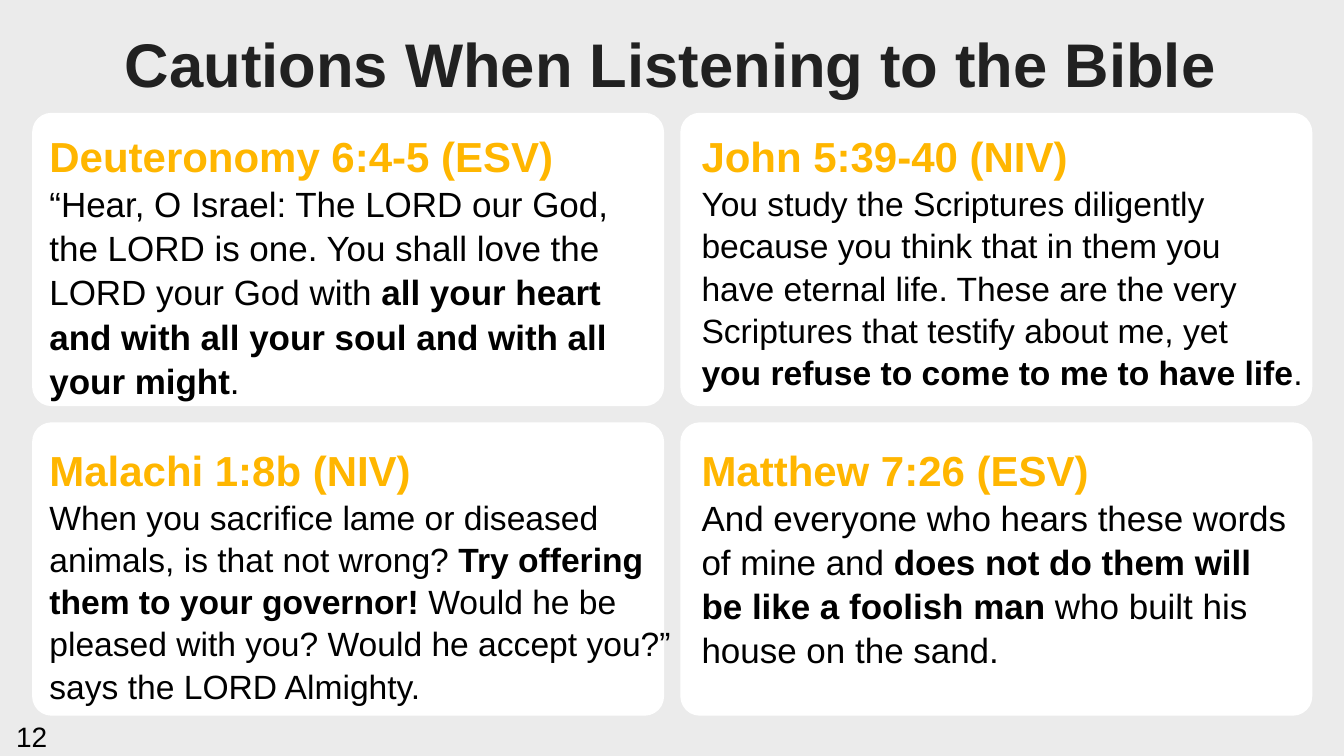
import pptx
import pptx.dml.color
import pptx.enum.shapes
import pptx.enum.text
import pptx.util

Pt = pptx.util.Pt
RGBColor = pptx.dml.color.RGBColor
PP_ALIGN = pptx.enum.text.PP_ALIGN

BACKGROUND = RGBColor(0xEB, 0xEB, 0xEB)
TITLE_GREY = RGBColor(0x21, 0x21, 0x21)
GOLD = RGBColor(0xFF, 0xB6, 0x00)
WHITE = RGBColor(0xFF, 0xFF, 0xFF)
BLACK = RGBColor(0x00, 0x00, 0x00)
FONT = "Arial"
LINE_SPACING = 1.05

# Card grid, in points
GRID_LEFT, GRID_TOP = 23, 80.6
CARD_WIDTH, CARD_HEIGHT = 451.4, 209.5
COLUMN_GAP, ROW_GAP = 11.6, 11.6
COLUMN_INSETS = (12.3, 15.1)
ROW_INSETS = (10.8, 13.7)

# Each passage: row, column, text width, text height, size, reference, (text, bold) runs
PASSAGES = [
    (0, 0, 422, 188, 25, "Deuteronomy 6:4-5 (ESV)", [
        ("“Hear, O Israel: The LORD our God, the LORD is one. You shall love "
         "the LORD your God with ", False),
        ("all your heart and with all your soul and with all your might", True),
        (". ", False)]),
    (1, 0, 450, 188, 24, "Malachi 1:8b (NIV)", [
        ("When you sacrifice lame or diseased animals, is that not wrong? ", False),
        ("Try offering them to your governor!", True),
        (" Would he be pleased with you? Would he accept you?” says the LORD "
         "Almighty.", False)]),
    (0, 1, 448.6, 181.4, 24, "John 5:39-40 (NIV)", [
        ("You study the Scriptures diligently because you think that in them you \n"
         "have eternal life. These are the very Scriptures that testify about me, yet \n",
         False),
        ("you refuse to come to me to have life", True),
        (". ", False)]),
    (1, 1, 422, 157.7, 25, "Matthew 7:26 (ESV)", [
        ("And everyone who hears these words of mine and ", False),
        ("does not do them will be like a foolish man ", True),
        ("who built his house on the sand.", False)]),
]


def prepare_frame(shape):
    frame = shape.text_frame
    frame.margin_left = frame.margin_right = 0
    frame.margin_top = frame.margin_bottom = 0
    frame.word_wrap = True
    frame.auto_size = pptx.enum.text.MSO_AUTO_SIZE.SHAPE_TO_FIT_TEXT
    frame.vertical_anchor = pptx.enum.text.MSO_ANCHOR.TOP
    return frame


def add_text(paragraph, text, size, color, bold=False):
    """Add one styled run for each line of the text."""
    for index, line in enumerate(text.split("\n")):
        if index:
            paragraph.add_line_break()
        if line:
            run = paragraph.add_run()
            run.text = line
            run.font.name = FONT
            run.font.size = Pt(size)
            run.font.bold = bold
            run.font.color.rgb = color


def format_paragraph(paragraph, alignment=PP_ALIGN.LEFT):
    paragraph.alignment = alignment
    paragraph.line_spacing = LINE_SPACING
    paragraph.space_before = paragraph.space_after = Pt(0)


def add_title(slide, left, top, width, height):
    title = slide.shapes.title
    title.left, title.top = Pt(left), Pt(top)
    title.width, title.height = Pt(width), Pt(height)
    paragraph = prepare_frame(title).paragraphs[0]
    format_paragraph(paragraph, PP_ALIGN.CENTER)
    add_text(paragraph, "Cautions When Listening to the Bible", 44, TITLE_GREY, True)


def add_page_number(slide, left, top, width, height):
    box = slide.shapes.add_textbox(Pt(left), Pt(top), Pt(width), Pt(height))
    paragraph = prepare_frame(box).paragraphs[0]
    format_paragraph(paragraph)
    add_text(paragraph, "12", 20, BLACK)


def add_card(slide, left, top, width, height):
    card = slide.shapes.add_shape(
        pptx.enum.shapes.MSO_SHAPE.ROUNDED_RECTANGLE,
        Pt(left), Pt(top), Pt(width), Pt(height))
    card.adjustments[0] = 0.066
    card.shadow.inherit = False
    card.fill.solid()
    card.fill.fore_color.rgb = WHITE
    card.line.fill.background()


def add_passage(slide, left, top, width, height, size, reference, runs):
    box = slide.shapes.add_textbox(Pt(left), Pt(top), Pt(width), Pt(height))
    frame = prepare_frame(box)
    heading = frame.paragraphs[0]
    format_paragraph(heading)
    add_text(heading, reference, 30, GOLD, True)
    verse = frame.add_paragraph()
    format_paragraph(verse)
    for text, bold in runs:
        add_text(verse, text, size, BLACK, bold)


def main():
    presentation = pptx.Presentation()
    presentation.slide_width, presentation.slide_height = Pt(960), Pt(540)
    slide = presentation.slides.add_slide(presentation.slide_layouts[5])
    slide.background.fill.solid()
    slide.background.fill.fore_color.rgb = BACKGROUND

    # Title and page number
    add_page_number(slide, 11.5, 512.6, 80, 24.5)
    add_title(slide, 18, 15.8, 923, 53.3)

    # Cards first, so that long verses stay in front
    lefts = [GRID_LEFT + column * (CARD_WIDTH + COLUMN_GAP) for column in range(2)]
    tops = [GRID_TOP + row * (CARD_HEIGHT + ROW_GAP) for row in range(2)]
    for left in lefts:
        for top in tops:
            add_card(slide, left, top, CARD_WIDTH, CARD_HEIGHT)

    # Bible passages
    for row, column, width, height, size, reference, runs in PASSAGES:
        add_passage(slide, lefts[column] + COLUMN_INSETS[column],
                    tops[row] + ROW_INSETS[row], width, height,
                    size, reference, runs)

    presentation.save("out.pptx")


if __name__ == "__main__":
    main()
